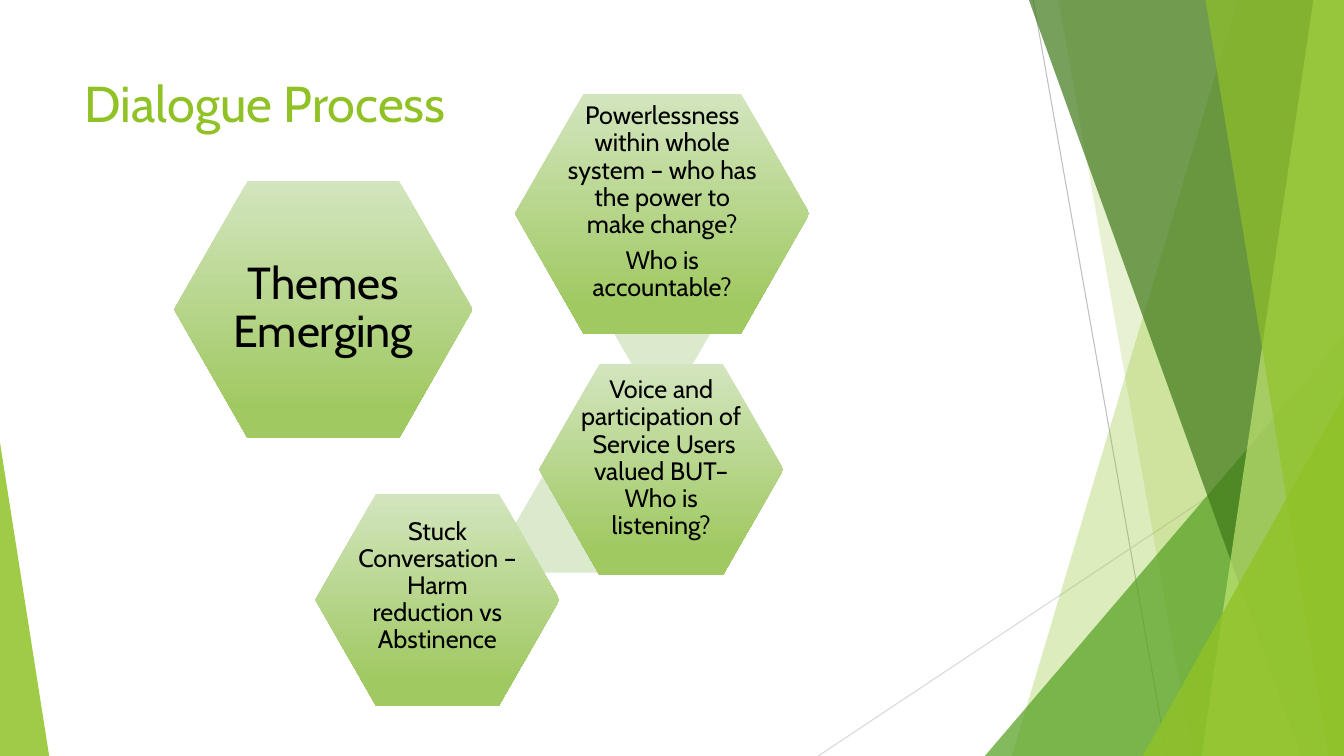
from lxml import etree
from pptx import Presentation
from pptx.dml.color import RGBColor
from pptx.enum.shapes import MSO_CONNECTOR, MSO_SHAPE
from pptx.enum.text import MSO_ANCHOR, PP_ALIGN
from pptx.oxml.ns import qn
from pptx.util import Cm, Pt

HEXAGON = MSO_SHAPE.HEXAGON
TRIANGLE = MSO_SHAPE.ISOSCELES_TRIANGLE
STRAIGHT = MSO_CONNECTOR.STRAIGHT
TOP, MIDDLE = MSO_ANCHOR.TOP, MSO_ANCHOR.MIDDLE
LEFT, CENTER = PP_ALIGN.LEFT, PP_ALIGN.CENTER

WIDTH, HEIGHT = 33.87, 19.05  # all lengths in cm
FONT = "Cabin"
COLORS = {
    "lime": "90C226", "green": "54A021", "forest": "3F7819", "pale lime": "C0E474",
    "gray": "BFBFBF", "light gray": "D9D9D9", "text": "000000",
    "hexagon top": "D3E5BE", "hexagon bottom": "A0C962", "link": "DBE9CD",
}

TITLE = "Dialogue Process"
TITLE_BOX = (1.88, 1.7, 23.88, 3.66)

# box, text size, side inset, bottom inset, paragraphs
THEMES = [
    ((4.39, 4.55, 7.52, 6.5), 32, 0.1, 0.1, ["Themes Emerging"]),
    ((12.98, 2.36, 7.42, 6.05), 18, 0.03, 0.64,
     ["Powerlessness within whole system – who has the power to make change?",
      "Who is accountable?"]),
    ((13.59, 9.17, 6.15, 5.33), 18, 0.03, 0.64,
     ["Voice and participation of  Service Users valued BUT– Who is listening?"]),
    ((7.95, 12.45, 6.15, 5.33), 18, 0.03, 0.76,
     ["Stuck Conversation – Harm reduction vs Abstinence"]),
]
LINKS = [(15.27, 6.83, 2.84, 2.44), (12.98, 11.99, 2.84, 2.44)]

# start, end, color
RAYS = [
    ((26.04, 0), (29.41, HEIGHT), "gray"),
    ((WIDTH, 10.24), (20.62, HEIGHT), "light gray"),
]
# Bands reach the right edge: x at the top, x at the bottom, color, opacity
BACK_BANDS = [(31.19, 25.5, "lime", 30), (26.67, 30.05, "lime", 20)]
FRONT_BANDS = [(25.93, 32.79, "forest", 70), (33.1, 30.28, "pale lime", 70),
               (30.38, 33.48, "lime", 65)]
# Wedges stand on the bottom edge: left, right, top, apex, color, opacity
BACK_WEDGES = [(24.82, WIDTH, 8.46, 1, "green", 72)]
FRONT_WEDGES = [(28.8, WIDTH, 9.98, 1, "lime", 80), (0, 1.24, 11.15, 0, "lime", 85)]


def color(name):
    return RGBColor.from_string(COLORS[name])


def apply(target, values):
    for name, value in values.items():
        setattr(target, name, value)


def fill_plain(shape, name, opacity=100):
    shape.shadow.inherit = False
    shape.line.fill.background()
    shape.fill.solid()
    shape.fill.fore_color.rgb = color(name)
    if opacity < 100:
        for tag in shape.element.spPr.iter(qn("a:srgbClr")):
            etree.SubElement(tag, qn("a:alpha"), val=str(opacity * 1000))


def add_ray(slide, start, end, name):
    ray = slide.shapes.add_connector(STRAIGHT, *map(Cm, start + end))
    ray.line.color.rgb = color(name)
    ray.line.width = Pt(0.75)
    etree.SubElement(ray.element.spPr, qn("a:effectLst"))


def add_band(slide, top_x, bottom_x, name, opacity):
    builder = slide.shapes.build_freeform(Cm(top_x), 0)
    corners = [(WIDTH, 0), (WIDTH, HEIGHT), (bottom_x, HEIGHT)]
    builder.add_line_segments([(Cm(x), Cm(y)) for x, y in corners], close=True)
    fill_plain(builder.convert_to_shape(), name, opacity)


def add_wedge(slide, left, right, top, apex, name, opacity):
    box = (left, top, right - left, HEIGHT - top)
    wedge = slide.shapes.add_shape(TRIANGLE, *map(Cm, box))
    wedge.adjustments[0] = apex
    fill_plain(wedge, name, opacity)


def add_hexagon(slide, box, slant):
    hexagon = slide.shapes.add_shape(HEXAGON, *map(Cm, box))
    hexagon.adjustments[0] = slant
    fill_plain(hexagon, "link")
    return hexagon


def write(frame, paragraphs, size, name, frame_values, paragraph_values):
    apply(frame, frame_values)
    for index, text in enumerate(paragraphs):
        paragraph = frame.add_paragraph() if index else frame.paragraphs[0]
        apply(paragraph, paragraph_values)
        run = paragraph.add_run()
        run.text = text
        apply(run.font, {"name": FONT, "size": Pt(size)})
        run.font.color.rgb = color(name)


def add_theme(slide, box, size, side, bottom, paragraphs):
    hexagon = add_hexagon(slide, box, 0.286)
    hexagon.fill.gradient()
    hexagon.fill.gradient_angle = 270
    stops = [(0, "hexagon top"), (0.88, "hexagon bottom")]
    for stop, (position, name) in zip(hexagon.fill.gradient_stops, stops):
        stop.position = position
        stop.color.rgb = color(name)
    write(hexagon.text_frame, paragraphs, size, "text",
          {"word_wrap": True, "vertical_anchor": MIDDLE,
           "margin_left": Cm(side), "margin_right": Cm(side),
           "margin_top": Cm(0.08), "margin_bottom": Cm(bottom)},
          {"alignment": CENTER, "line_spacing": 0.9, "space_after": Pt(0.35 * size)})


def main():
    presentation = Presentation()
    presentation.slide_width, presentation.slide_height = Cm(WIDTH), Cm(HEIGHT)
    slide = presentation.slides.add_slide(presentation.slide_layouts[5])

    for add, items in [(add_ray, RAYS), (add_band, BACK_BANDS),
                       (add_wedge, BACK_WEDGES), (add_band, FRONT_BANDS),
                       (add_wedge, FRONT_WEDGES)]:
        for item in items:
            add(slide, *item)

    title = slide.shapes.title
    apply(title, dict(zip(("left", "top", "width", "height"), map(Cm, TITLE_BOX))))
    write(title.text_frame, [TITLE], 36, "lime",
          {"word_wrap": True, "vertical_anchor": TOP}, {"alignment": LEFT})

    for box in LINKS:
        add_hexagon(slide, box, 0.289)
    for theme in THEMES:
        add_theme(slide, *theme)

    presentation.save("out.pptx")


if __name__ == "__main__":
    main()
